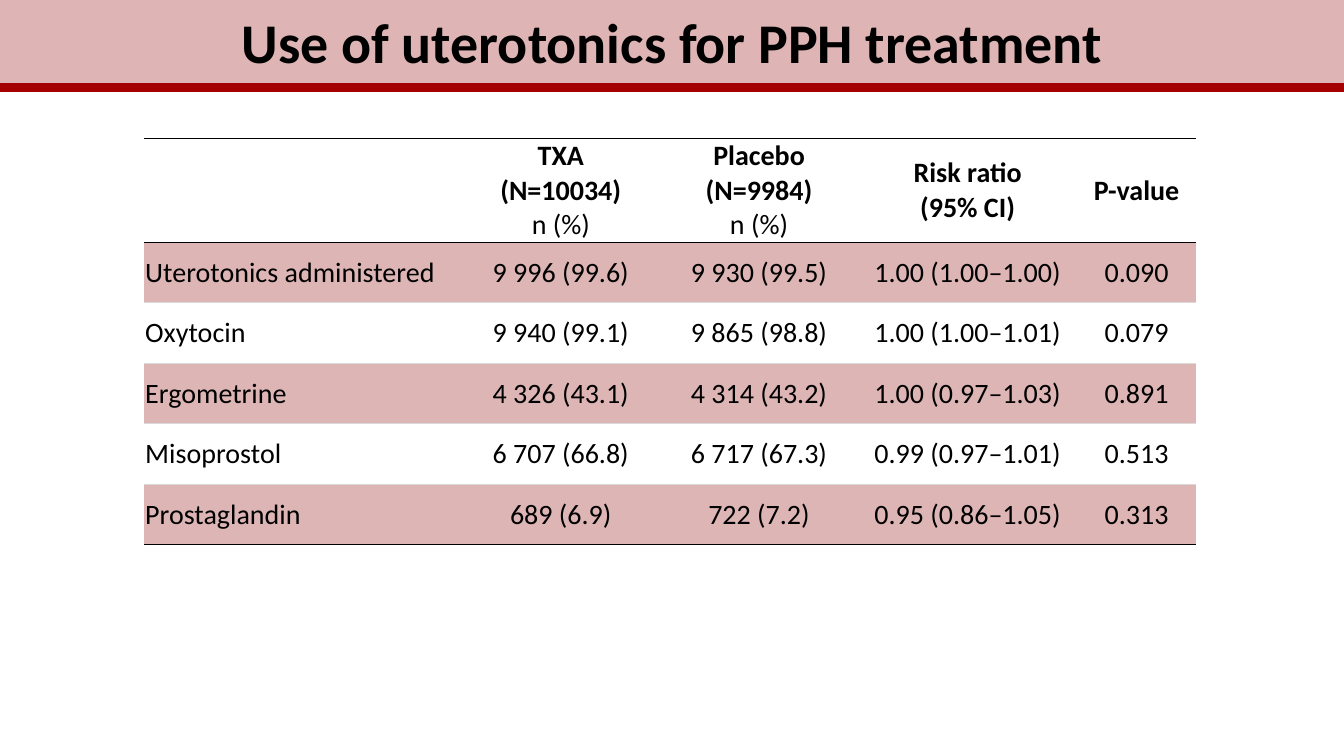
from pptx import Presentation
from pptx.dml.color import RGBColor
from pptx.enum.shapes import MSO_CONNECTOR
from pptx.enum.text import MSO_ANCHOR, PP_ALIGN
from pptx.oxml.ns import qn
from pptx.util import Pt
from lxml.etree import SubElement

FONT = "Calibri"
BLACK = RGBColor(0x00, 0x00, 0x00)
TITLE_PINK = RGBColor(0xDE, 0xB4, 0xB4)
BAND_PINK = RGBColor(0xDE, 0xB5, 0xB5)
DARK_RED = RGBColor(0xA4, 0x00, 0x00)
HAIRLINE_GREY = RGBColor(0xD9, 0xD9, 0xD9)

SLIDE_WIDTH, SLIDE_HEIGHT = 960, 540

COLUMN_WIDTHS = [226.8, 141.6, 141.6, 156.4, 85]
HEADER_HEIGHT, ROW_HEIGHT = 74.3, 43.2

# Each header cell is a list of (text, bold) paragraphs
HEADERS = [
    [],
    [("TXA", True), ("(N=10034)", True), ("n (%)", False)],
    [("Placebo (N=9984)", True), ("n (%)", False)],
    [("Risk ratio", True), ("(95% CI)", True)],
    [("P-value", True)],
]
ROWS = [
    ["Uterotonics administered", "9 996 (99.6)", "9 930 (99.5)", "1.00 (1.00–1.00)", "0.090"],
    ["Oxytocin", "9 940 (99.1)", "9 865 (98.8)", "1.00 (1.00–1.01)", "0.079"],
    ["Ergometrine", "4 326 (43.1)", "4 314 (43.2)", "1.00 (0.97–1.03)", "0.891"],
    ["Misoprostol", "6 707 (66.8)", "6 717 (67.3)", "0.99 (0.97–1.01)", "0.513"],
    ["Prostaglandin", "689 (6.9)", "722 (7.2)", "0.95 (0.86–1.05)", "0.313"],
]


def write_text(text_frame, lines, size=20, color=BLACK, align=PP_ALIGN.CENTER,
               line_spacing=None):
    """Write (text, bold) pairs, one paragraph each."""
    for index, (text, bold) in enumerate(lines):
        paragraph = text_frame.paragraphs[0] if index == 0 else text_frame.add_paragraph()
        paragraph.alignment = align
        if line_spacing:
            paragraph.line_spacing = line_spacing
        run = paragraph.add_run()
        run.text = text
        run.font.name = FONT
        run.font.size = Pt(size)
        run.font.bold = bold
        run.font.color.rgb = color


def set_borders(cell, top, bottom):
    """Set (color, width) rules above and below; leave the sides open."""
    properties = cell._tc.get_or_add_tcPr()
    for tag, rule in (("a:lnL", None), ("a:lnR", None), ("a:lnT", top), ("a:lnB", bottom)):
        line = SubElement(properties, qn(tag))
        if rule is None:
            SubElement(line, qn("a:noFill"))
            continue
        color, width = rule
        line.set("w", str(Pt(width)))
        fill = SubElement(line, qn("a:solidFill"))
        SubElement(fill, qn("a:srgbClr")).set("val", str(color))


def add_title_band(slide, left, top, width, height):
    # Title on a pink band
    title = slide.shapes.title
    title.left, title.top, title.width, title.height = (
        Pt(value) for value in (left, top, width, height))
    title.fill.solid()
    title.fill.fore_color.rgb = TITLE_PINK
    title.text_frame.vertical_anchor = MSO_ANCHOR.MIDDLE
    write_text(title.text_frame, [("Use of uterotonics for PPH treatment", True)],
               size=40, line_spacing=0.9)

    # Red rule along the foot of the band
    rule_top = Pt(top + height - 3)
    rule = slide.shapes.add_connector(
        MSO_CONNECTOR.STRAIGHT, Pt(left), rule_top, Pt(left + width), rule_top)
    rule.line.color.rgb = DARK_RED
    rule.line.width = Pt(6)
    SubElement(rule._element.spPr, qn("a:effectLst"))


def add_results_table(slide, left, top):
    row_heights = [HEADER_HEIGHT] + [ROW_HEIGHT] * len(ROWS)
    table = slide.shapes.add_table(
        len(row_heights), len(COLUMN_WIDTHS), Pt(left), Pt(top),
        Pt(sum(COLUMN_WIDTHS)), Pt(sum(row_heights))).table
    for column, width in zip(table.columns, COLUMN_WIDTHS):
        column.width = Pt(width)
    for row, height in zip(table.rows, row_heights):
        row.height = Pt(height)

    # Black rules frame the header and close the table; hairlines elsewhere
    rules = [(HAIRLINE_GREY, 0.25)] * (len(row_heights) + 1)
    rules[0] = rules[1] = (BLACK, 0.75)
    rules[-1] = (BLACK, 1)

    # Cells, with every other row shaded from the first data row on
    contents = [HEADERS] + [[[(text, False)] for text in row] for row in ROWS]
    for row_index, row in enumerate(contents):
        for column_index, lines in enumerate(row):
            cell = table.cell(row_index, column_index)
            cell.vertical_anchor = MSO_ANCHOR.MIDDLE
            cell.margin_left = cell.margin_right = cell.margin_top = Pt(0.75)
            cell.margin_bottom = Pt(0)
            set_borders(cell, rules[row_index], rules[row_index + 1])
            if row_index % 2:
                cell.fill.solid()
                cell.fill.fore_color.rgb = BAND_PINK
            else:
                cell.fill.background()
            write_text(cell.text_frame, lines,
                       align=PP_ALIGN.CENTER if column_index else PP_ALIGN.LEFT)


def main():
    presentation = Presentation()
    presentation.slide_width = Pt(SLIDE_WIDTH)
    presentation.slide_height = Pt(SLIDE_HEIGHT)
    slide = presentation.slides.add_slide(presentation.slide_layouts.get_by_name("Title Only"))
    add_title_band(slide, 0, 0, SLIDE_WIDTH, 65.5)
    add_results_table(slide, 103, 98.6)
    presentation.save("out.pptx")


if __name__ == "__main__":
    main()
